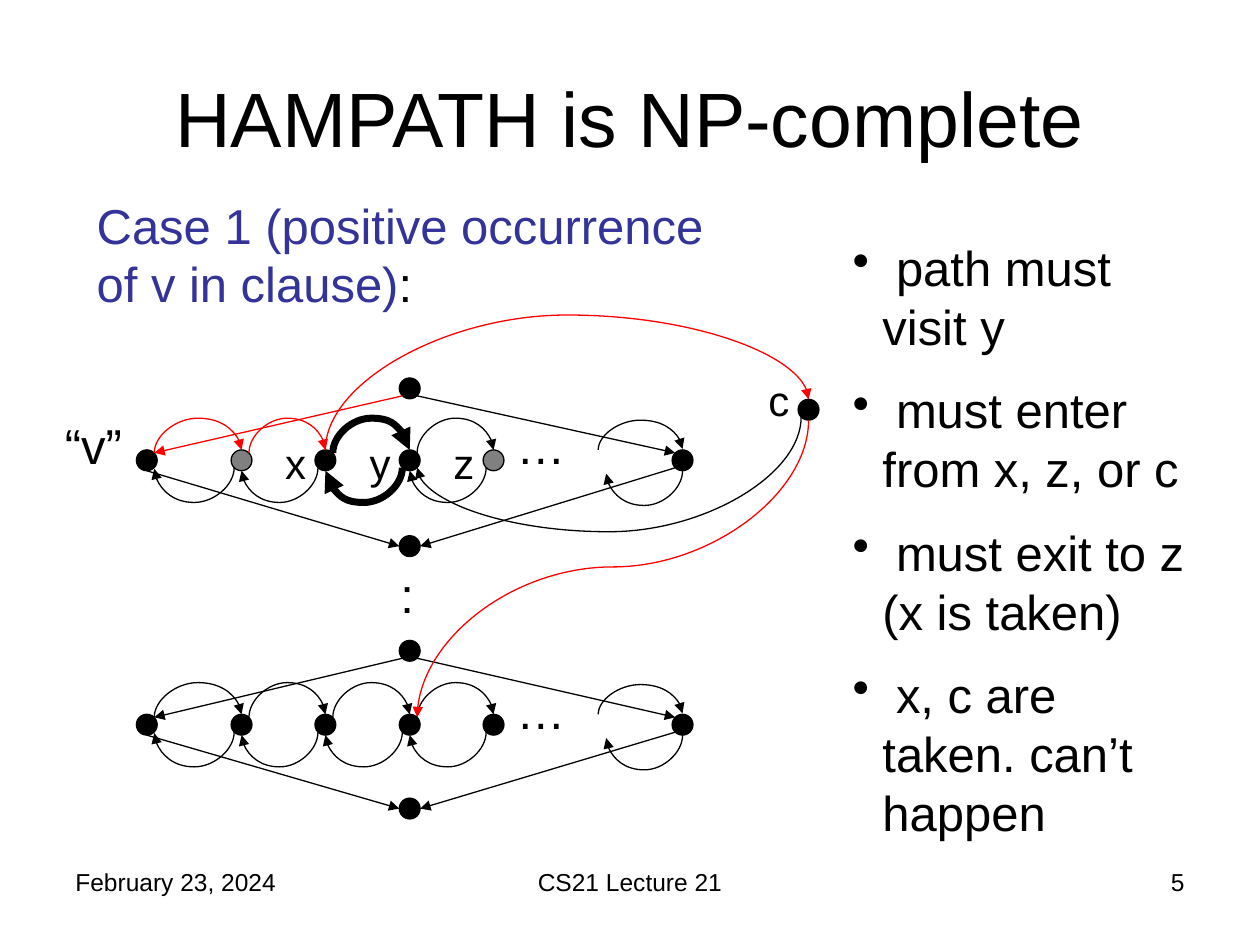
from dataclasses import dataclass

from lxml.etree import SubElement
from pptx import Presentation
from pptx.dml.color import RGBColor as RGB
from pptx.enum.shapes import MSO_CONNECTOR as CXN, MSO_SHAPE as SHP
from pptx.enum.text import MSO_ANCHOR as ANCHOR, PP_ALIGN as AL
from pptx.oxml.ns import qn
from pptx.util import Cm, Pt


@dataclass(frozen=True)
class Theme:
    font: str = "Arial"
    black: str = "000000"
    gray: str = "808080"
    red: str = "FF0000"
    blue: str = "333399"
    title: int = 44
    body: int = 28
    label: int = 24
    footer: int = 14
    thin: float = 0.75
    bold: float = 4


T = Theme()
R = 0.21  # node radius, cm
D = 0.15  # diagonal offset of a node's rim, cm
PORTS = {"N": (0, -R), "S": (0, R), "W": (-R, 0), "E": (R, 0),
         "NE": (D, -D), "SE": (D, D), "SW": (-D, D), "NW": (-D, -D)}


def port(node, side):
    dx, dy = PORTS[side]
    return node[0] + dx, node[1] + dy


def add_run(p, text, *, size=T.body, color=T.black):
    r = p.add_run()
    r.text = text
    r.font.name = T.font
    r.font.size = Pt(size)
    r.font.color.rgb = RGB.from_string(color)


class Sketch:
    """Holds the theme and the current slide."""

    def __init__(self, slide, theme):
        self.s, self.t = slide, theme

    def text(self, x, y, w, h, paras, *, size=T.body, align=AL.LEFT,
             anchor=ANCHOR.TOP, before=0, bullet=False):
        """Each paragraph is a list of (text, color) runs."""
        tf = self.s.shapes.add_textbox(Cm(x), Cm(y), Cm(w), Cm(h)).text_frame
        tf.word_wrap = True
        tf.vertical_anchor = anchor
        for i, runs in enumerate(paras):
            p = tf.paragraphs[0] if i == 0 else tf.add_paragraph()
            p.alignment = align
            p.space_before = Pt(before)
            if bullet:
                pPr = p._p.get_or_add_pPr()
                pPr.set("marL", str(Cm(0.6)))
                pPr.set("indent", str(-Cm(0.6)))
                SubElement(pPr, qn("a:buChar")).set("char", "•")
            for text, color in runs:
                add_run(p, text, size=size, color=color)

    def label(self, x, y, text, *, w=1.9, size=T.body):
        self.text(x, y, w, 1.4, [[(text, self.t.black)]], size=size,
                  before=size / 2)

    def node(self, center, color=T.black):
        x, y = center
        sp = self.s.shapes.add_shape(SHP.OVAL, Cm(x - R), Cm(y - R),
                                     Cm(2 * R), Cm(2 * R))
        sp.shadow.inherit = False
        sp.fill.solid()
        sp.fill.fore_color.rgb = RGB.from_string(color)
        sp.line.color.rgb = RGB.from_string(self.t.black)
        sp.line.width = Pt(self.t.thin)

    def arrow(self, a, b, *, color=T.black, width=T.thin, kind=CXN.STRAIGHT):
        c = self.s.shapes.add_connector(kind, Cm(a[0]), Cm(a[1]),
                                        Cm(b[0]), Cm(b[1]))
        c.line.color.rgb = RGB.from_string(color)
        c.line.width = Pt(width)
        SubElement(c.line._get_or_add_ln(), qn("a:tailEnd")).set("type", "triangle")
        SubElement(c._element.spPr, qn("a:effectLst"))
        return c

    def curve(self, a, b, turn_y, **style):
        """Arrow leaving a vertically, running level at turn_y, then on to b.
        Rightward curves end above their start, leftward ones below."""
        c = self.arrow(a, b, kind=CXN.CURVE, **style)
        right = b[0] > a[0]
        sign = -1 if right else 1
        w, h = max(abs(b[1] - a[1]), 0.02), abs(b[0] - a[0])
        cx, cy = (a[0] + b[0]) / 2, a[1] + sign * w / 2
        xfrm = c._element.spPr.find(qn("a:xfrm"))
        for flip in ("flipH", "flipV"):
            xfrm.attrib.pop(flip, None)
        xfrm.set("rot", str((270 if right else 90) * 60000))
        c.left, c.top = Cm(cx - w / 2), Cm(cy - h / 2)
        c.width, c.height = Cm(w), Cm(h)
        geom = c._element.spPr.find(qn("a:prstGeom"))
        av = geom.find(qn("a:avLst"))
        if av is None:
            av = SubElement(geom, qn("a:avLst"))
        gd = SubElement(av, qn("a:gd"))
        gd.set("name", "adj1")
        gd.set("fmla", f"val {round((turn_y - a[1]) * sign / w * 100000)}")

    def gadget(self, top_y, mid_y, bottom_y, *, gray=(), red=(), bold=(),
               left_color=T.black):
        """Diamond of nodes for one variable; returns its middle row."""
        t = self.t
        row = [(x, mid_y) for x in (2.96, 4.87, 6.56, 8.26, 9.95, 13.76)]
        top, bottom = (row[3][0], top_y), (row[3][0], bottom_y)
        first, last = row[0], row[-1]
        for i, n in enumerate(row):
            self.node(n, t.gray if i in gray else t.black)
        self.node(top)
        self.node(bottom)
        # Diamond sides
        self.arrow(port(top, "SW"), port(first, "NE"), color=left_color)
        self.arrow(port(top, "SE"), port(last, "NW"))
        self.arrow(port(first, "S"), port(bottom, "W"))
        self.arrow(port(last, "SW"), port(bottom, "E"))
        # Arcs between neighbours
        for i, (l, r) in enumerate(zip(row[:4], row[1:5])):
            width = t.bold if i in bold else t.thin
            self.curve(port(l, "NE"), port(r, "N"), mid_y - 0.85, width=width,
                       color=t.red if i in red else t.black)
            self.curve(port(r, "SW"), port(l, "S" if i else "SE"),
                       mid_y + 0.85, width=width)
        # Arcs at the gap
        self.curve((12.06, mid_y - R), port(last, "N"), mid_y - 0.81)
        self.curve(port(last, "S"), (12.22, mid_y + 0.27), mid_y + 0.91)
        self.label(10.16, mid_y - 1.02, "…")
        return row


def main():
    prs = Presentation()
    prs.slide_width, prs.slide_height = Cm(25.4), Cm(19.05)
    k = Sketch(prs.slides.add_slide(prs.slide_layouts[6]), T)

    # Footer and title
    for x, w, text, align in ((1.27, 5.92, "February 23, 2024", AL.LEFT),
                              (8.68, 8.04, "CS21 Lecture 21", AL.CENTER),
                              (18.21, 5.92, "5", AL.RIGHT)):
        k.text(x, 17.35, w, 1.32, [[(text, T.black)]], size=T.footer, align=align)
    k.text(1.27, 0.76, 22.86, 3.18, [[("HAMPATH is NP-complete", T.black)]],
           size=T.title, align=AL.CENTER, anchor=ANCHOR.MIDDLE)

    # Variable gadgets
    v = k.gadget(7.83, 9.28, 11.01, gray=(1, 4), red=(0, 1), bold=(2,),
                 left_color=T.red)
    other = k.gadget(13.12, 14.61, 16.3)
    k.label(7.82, 11.25, ":", w=1.06)

    # Clause node and its edges
    clause = (16.3, 8.26)
    k.node(clause)
    k.curve(port(v[2], "N"), port(clause, "N"), 6.35, color=T.red)
    k.curve(port(clause, "S"), port(other[3], "NE"), 11.43, color=T.red)
    k.curve(port(clause, "SW"), port(v[3], "SE"), 10.72)

    # Labels
    k.label(15.24, 7.42, "c", w=0.85, size=T.label)
    for name, (x, y) in zip("xyz", v[2:5]):
        k.label(x - 1.06, y - 0.59, name, w=0.85, size=T.label)
    k.label(1.06, 8.26, "“v”")

    # Case heading and argument
    k.text(1.7, 3.81, 13.34, 2.62, before=14, paras=[
        [("Case 1 (positive occurrence of v in clause)", T.blue), (":", T.black)]])
    points = (" path must visit y", " must enter from x, z, or c",
              " must exit to z (x is taken)", " x, c are taken. can’t happen")
    k.text(16.94, 4.67, 7.41, 11.53, [[(p, T.black)] for p in points],
           before=14, bullet=True)

    prs.save("out.pptx")


if __name__ == "__main__":
    main()
